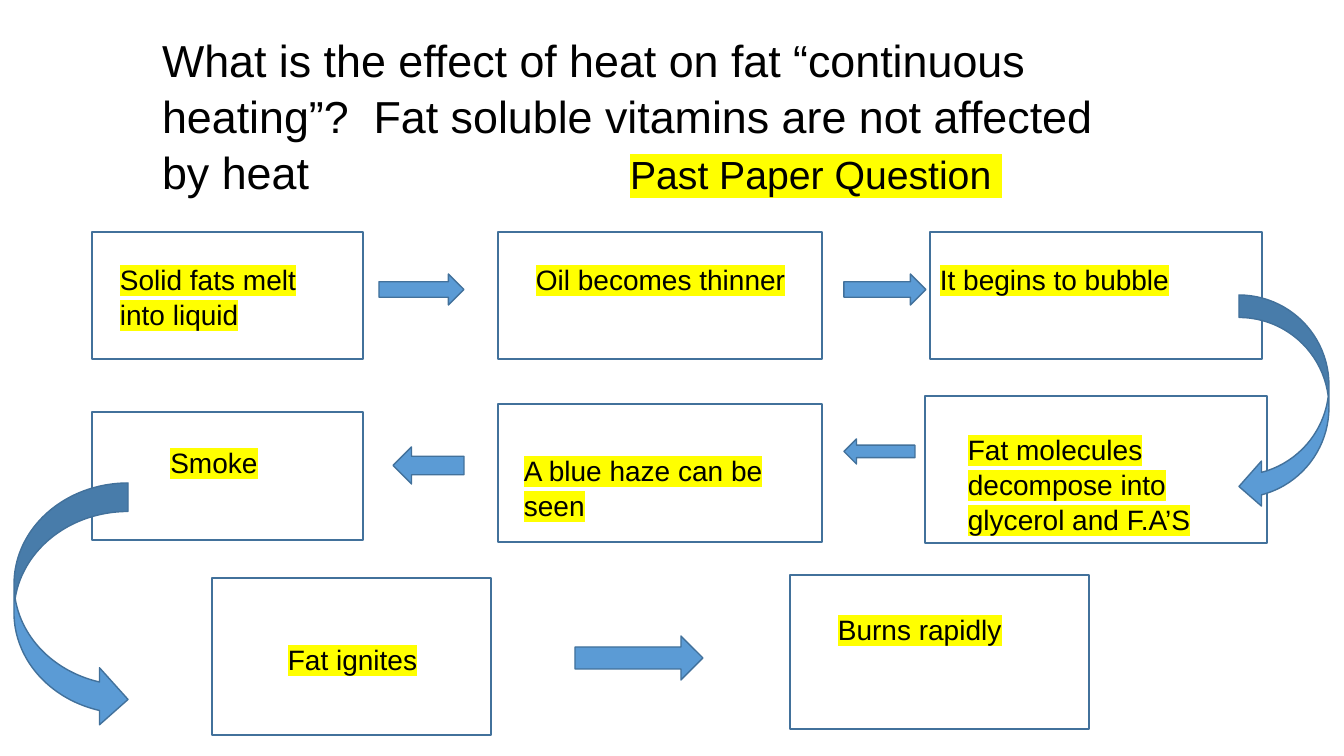
"""Build a slide showing how continuous heating affects fat."""
from lxml.etree import SubElement
from pptx import Presentation
from pptx.dml.color import RGBColor
from pptx.enum.shapes import MSO_SHAPE
from pptx.enum.text import MSO_ANCHOR, PP_ALIGN
from pptx.oxml.ns import qn
from pptx.util import Pt

PX = 914400 / 100.8
FONT = "Arial"
COLORS = {"text": "000000", "mark": "FFFF00", "box": "FFFFFF",
          "arrow": "5B9BD5", "line": "42719B"}

TITLE = ("What is the effect of heat on fat “continuous heating”?  "
         "Fat soluble vitamins are not affected by heat\t")
TITLE_MARK = "\tPast Paper Question "
TITLE_BOX = (152, 26, 972, 173)
TITLE_TABS = (446, 468)
SMOKE_INDENT, SMOKE_TAB = 7, 46

STEPS = [
    ("Solid fats melt into liquid", (92, 232, 271, 127), (110, 256, 249), 2),
    ("Oil becomes thinner", (498, 232, 324, 127), (526, 256, 292), 1),
    ("It begins to bubble", (930, 232, 332, 127), (930, 256, 332), 1),
    ("\tSmoke", (92, 412, 271, 128), (110, 439, 242), 1),
    ("A blue haze can be seen", (498, 404, 324, 138), (514, 447, 292), 2),
    ("Fat molecules decompose into glycerol and F.A’S",
     (925, 396, 342, 147), (958, 426, 276), 3),
    ("Burns rapidly", (790, 575, 299, 154), (828, 606, 225), 1),
    ("Fat ignites", (212, 578, 279, 157), (278, 636, 242), 1),
]
ARROWS = [
    (MSO_SHAPE.RIGHT_ARROW, (379, 274, 85, 31)),
    (MSO_SHAPE.RIGHT_ARROW, (844, 274, 82, 31)),
    (MSO_SHAPE.LEFT_ARROW, (844, 439, 71, 25)),
    (MSO_SHAPE.LEFT_ARROW, (393, 447, 71, 37)),
    (MSO_SHAPE.RIGHT_ARROW, (575, 636, 128, 44)),
    (MSO_SHAPE.CURVED_RIGHT_ARROW, (14, 483, 114, 245)),
    (MSO_SHAPE.CURVED_LEFT_ARROW, (1239, 295, 90, 214)),
]
LINE_HEIGHT, PADDING = 34, 10


def px(*lengths):
    return [round(n * PX) for n in lengths]


def rgb(name):
    return RGBColor.from_string(COLORS[name])


def add_shape(slide, kind, box, fill):
    sp = slide.shapes.add_shape(kind, *px(*box))
    sp.shadow.inherit = False
    sp.fill.solid()
    sp.fill.fore_color.rgb = rgb(fill)
    sp.line.color.rgb = rgb("line")
    sp.line.width = Pt(1)


def format_run(r, size, marked=False):
    r.font.size = Pt(size)
    r.font.color.rgb = rgb("text")
    r.font.name = FONT
    if marked:
        mark = SubElement(r.font._element, qn("a:highlight"))
        SubElement(mark, qn("a:srgbClr"), val=COLORS["mark"])
        r.font._element.find(qn("a:solidFill")).addnext(mark)


def set_tabs(p, *stops):
    tabs = SubElement(p._p.get_or_add_pPr(), qn("a:tabLst"))
    for pos in px(*stops):
        SubElement(tabs, qn("a:tab"), pos=str(pos), algn="l")


def add_title(slide):
    sp = slide.shapes.title
    sp.left, sp.top, sp.width, sp.height = px(*TITLE_BOX)
    tf = sp.text_frame
    tf.vertical_anchor = MSO_ANCHOR.TOP
    p = tf.paragraphs[0]
    p.alignment = PP_ALIGN.LEFT
    p.line_spacing = 1.04
    set_tabs(p, *TITLE_TABS)
    for text, size, marked in ((TITLE, 32, False), (TITLE_MARK, 28, True)):
        r = p.add_run()
        r.text = text
        format_run(r, size, marked)


def add_label(slide, text, place, lines):
    height = LINE_HEIGHT * lines + PADDING
    tf = slide.shapes.add_textbox(*px(*place, height)).text_frame
    tf.word_wrap = True
    p = tf.paragraphs[0]
    p.text = text
    p.line_spacing = 1.04
    if text.startswith("\t"):
        p._p.get_or_add_pPr().set("indent", str(px(SMOKE_INDENT)[0]))
        set_tabs(p, SMOKE_TAB)
    format_run(p.runs[0], 20, True)


def main():
    prs = Presentation()
    prs.slide_width, prs.slide_height = px(1344, 756)
    slide = prs.slides.add_slide(prs.slide_layouts[5])
    for text, box, place, lines in STEPS:
        add_shape(slide, MSO_SHAPE.RECTANGLE, box, "box")
    for text, box, place, lines in STEPS:
        add_label(slide, text, place, lines)
    add_title(slide)
    for kind, box in ARROWS:
        add_shape(slide, kind, box, "arrow")
    prs.save("out.pptx")


if __name__ == "__main__":
    main()
